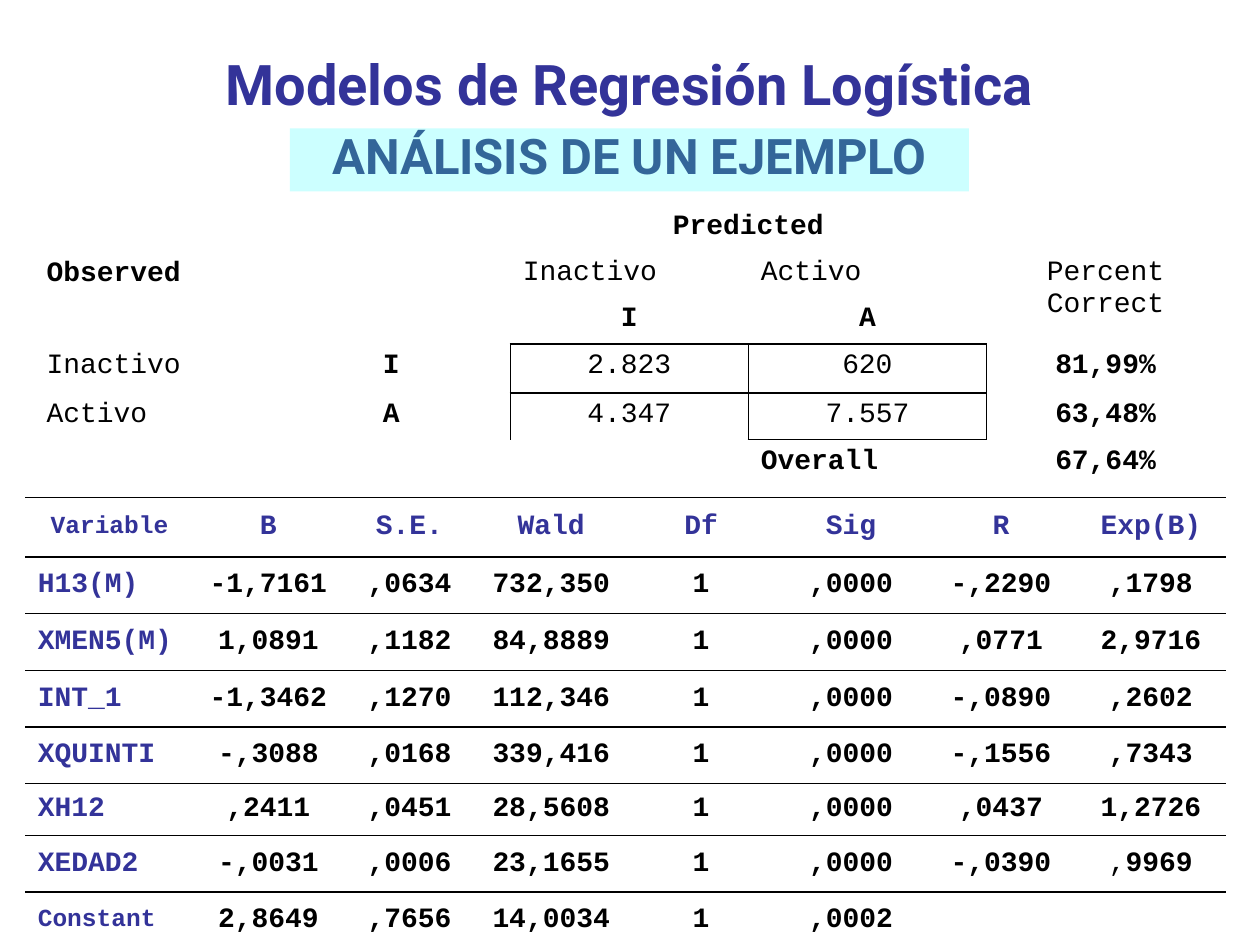
from lxml import etree
from pptx import Presentation
from pptx.dml.color import RGBColor
from pptx.enum import shapes, text
from pptx.oxml import ns
from pptx.util import Inches, Pt

BLACK = RGBColor(0, 0, 0)
NAVY = RGBColor(0x33, 0x33, 0x99)
STEEL = RGBColor(0x33, 0x66, 0x99)
CYAN = RGBColor(0xCC, 0xFF, 0xFF)
LEFT, CENTER = text.PP_ALIGN.LEFT, text.PP_ALIGN.CENTER
TOP, MIDDLE = text.MSO_ANCHOR.TOP, text.MSO_ANCHOR.MIDDLE


def add_run(p, content, font, size, color, bold=True):
    r = p.add_run()
    r.text = content
    r.font.name = font
    r.font.size = Pt(size)
    r.font.bold = bold
    r.font.color.rgb = color


def set_cell(cell, runs, size, color, align, anchor, borders):
    tcPr = cell._tc.get_or_add_tcPr()
    for side in "LRTB":
        ln = etree.SubElement(tcPr, ns.qn("a:ln" + side), w="12700")
        if side in borders:
            fill = etree.SubElement(ln, ns.qn("a:solidFill"))
            etree.SubElement(fill, ns.qn("a:srgbClr"), val=str(BLACK))
        else:
            etree.SubElement(ln, ns.qn("a:noFill"))
    cell.fill.background()
    cell.vertical_anchor = anchor
    p = cell.text_frame.paragraphs[0]
    p.alignment = align
    for content, bold in runs:
        add_run(p, content, "Courier New", size, color, bold)
    if not runs:
        p._p.get_or_add_endParaRPr().set("sz", str(size * 100))


prs = Presentation()
prs.slide_width, prs.slide_height = Inches(10), Inches(7.5)
s = prs.slides.add_slide(prs.slide_layouts[6])

sp = s.shapes.add_textbox(Inches(1.69), Inches(0.34), Inches(7.22), Inches(0.63))
tf = sp.text_frame
tf.word_wrap = True
add_run(tf.paragraphs[0], "Modelos de Regresión Logística", "Roboto", 32, NAVY)

sp = s.shapes.add_shape(shapes.MSO_SHAPE.RECTANGLE, Inches(2.3), Inches(1.02), Inches(5.39), Inches(0.5))
sp.shadow.inherit = False
sp.fill.solid()
sp.fill.fore_color.rgb = CYAN
sp.line.fill.background()
tf = sp.text_frame
tf.word_wrap = False
tf.vertical_anchor = TOP
p = tf.paragraphs[0]
p.alignment = CENTER
p.line_spacing = 0.85
add_run(p, "ANÁLISIS DE UN EJEMPLO", "Roboto", 28, STEEL)

matrix = [
    ["Observed", "", "Predicted", "", ""],
    ["", "", "Inactivo", "Activo", "Percent Correct"],
    ["", "", "I", "A", ""],
    ["Inactivo", "I", "2.823", "620", "81,99%"],
    ["Activo", "A", "4.347", "7.557", "63,48%"],
    ["", "", "", "Overall", "67,64%"],
]
regular = {"Inactivo", "Activo", "Percent Correct", "2.823", "620", "4.347", "7.557"}
left_aligned = {"Observed", "Inactivo", "Activo", "Overall"}
borders = {(2, 2): "B", (2, 3): "B", (5, 3): "T"}
for i in (3, 4):
    borders.update({(i, 1): "R", (i, 2): "LRTB", (i, 3): "LRTB", (i, 4): "L"})

table = s.shapes.add_table(6, 5, Inches(0.27), Inches(1.62), Inches(9.44), Inches(2.22)).table
for col in table.columns:
    col.width = Inches(1.89)
for row, height in zip(table.rows, (0.37, 0.37, 0.37, 0.39, 0.37, 0.37)):
    row.height = Inches(height)
for i, values in enumerate(matrix):
    for j, value in enumerate(values):
        runs = [(value, value not in regular)] if value else []
        set_cell(table.cell(i, j), runs, 16, BLACK, LEFT if value in left_aligned else CENTER,
                 MIDDLE if i == 0 else TOP, borders.get((i, j), ""))
for first, last in [((0, 0), (2, 0)), ((0, 1), (2, 1)), ((0, 2), (0, 3)),
                    ((1, 4), (2, 4)), ((5, 0), (5, 2))]:
    table.cell(*first).merge(table.cell(*last))

coefficients = [
    ["Variable", "B", "S.E.", "Wald", "Df", "Sig", "R", "Exp(B)"],
    ["H13(M)", "-1,7161", ",0634", "732,350", "1", ",0000", "-,2290", ",1798"],
    ["XMEN5(M)", "1,0891", ",1182", "84,8889", "1", ",0000", ",0771", "2,9716"],
    ["INT_1", "-1,3462", ",1270", "112,346", "1", ",0000", "-,0890", ",2602"],
    ["XQUINTI", "-,3088", ",0168", "339,416", "1", ",0000", "-,1556", ",7343"],
    ["XH12", ",2411", ",0451", "28,5608", "1", ",0000", ",0437", "1,2726"],
    ["XEDAD2", "-,0031", ",0006", "23,1655", "1", ",0000", "-,0390", ",9969"],
    ["Constant", "2,8649", ",7656", "14,0034", "1", ",0002", "", ""],
]
table = s.shapes.add_table(8, 8, Inches(0.2), Inches(3.95), Inches(9.53), Inches(3.58)).table
for col, width in zip(table.columns, [1.34, 1.18, 1.06] + [1.19] * 5):
    col.width = Inches(width)
for row, height in zip(table.rows, (0.47, 0.45, 0.45, 0.45, 0.45, 0.41, 0.45, 0.45)):
    row.height = Inches(height)
for i, values in enumerate(coefficients):
    for j, value in enumerate(values):
        runs = [(value, True)] if value else []
        if value == ",9969":
            runs = [(",", False), ("9969", True)]
        set_cell(table.cell(i, j), runs, 14 if value in ("Variable", "Constant") else 16,
                 NAVY if i == 0 or j == 0 else BLACK,
                 LEFT if j == 0 and i > 0 else CENTER, MIDDLE, "TB")

prs.save("out.pptx")
